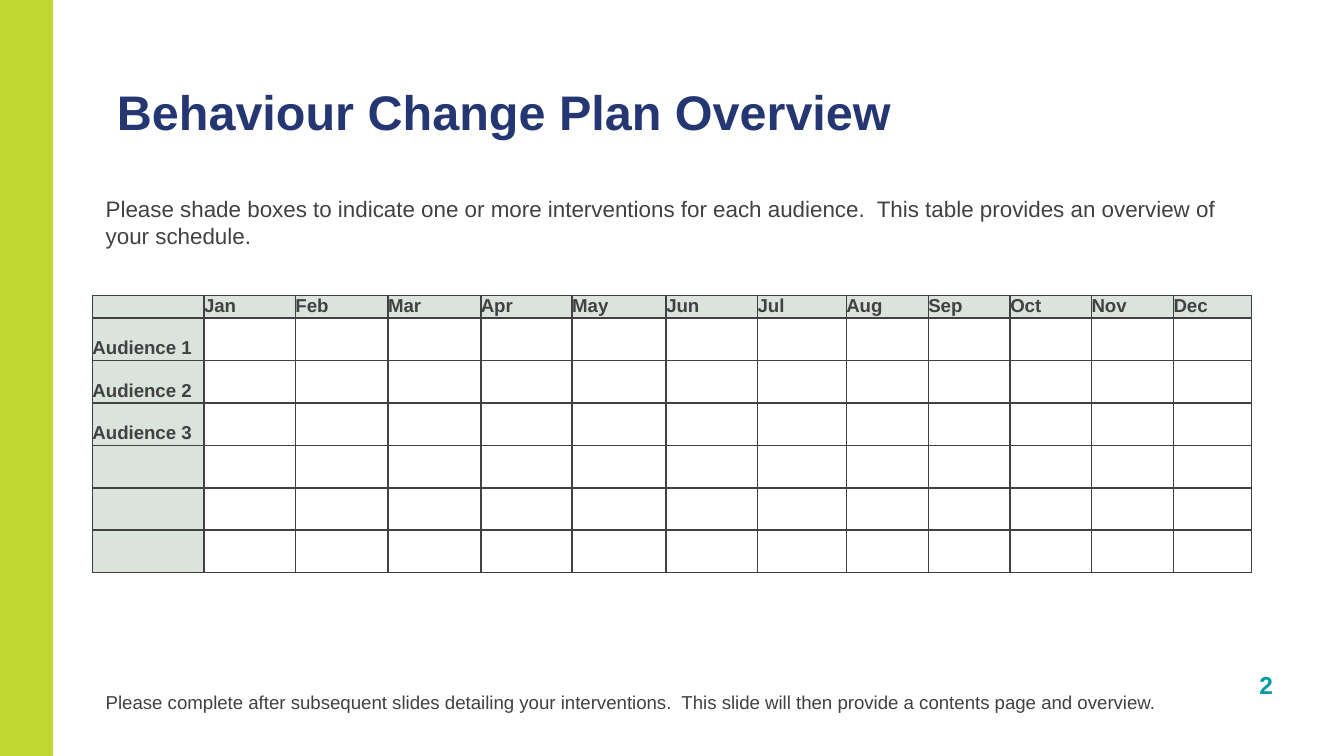
"""Build the behaviour change plan overview slide with its yearly schedule table."""
from lxml import etree
from pptx import Presentation
from pptx.dml.color import RGBColor
from pptx.enum.shapes import MSO_SHAPE
from pptx.enum.text import MSO_ANCHOR, PP_ALIGN
from pptx.oxml.ns import qn
from pptx.util import Inches, Pt

RECTANGLE = MSO_SHAPE.RECTANGLE
TOP, BOTTOM = MSO_ANCHOR.TOP, MSO_ANCHOR.BOTTOM
LEFT, RIGHT = PP_ALIGN.LEFT, PP_ALIGN.RIGHT

LIME = RGBColor(0xC0, 0xD6, 0x31)
NAVY = RGBColor(0x25, 0x37, 0x73)
TEAL = RGBColor(0x00, 0x9B, 0xA7)
CHARCOAL = RGBColor(0x41, 0x40, 0x42)
SAGE = RGBColor(0xDA, 0xE4, 0xDD)

WIDTH = Inches(10)
HEIGHT = WIDTH * 9 // 16
COLUMN, ROW = WIDTH / 100, HEIGHT / 100
MARGINS = ("margin_left", "margin_top", "margin_right", "margin_bottom")


def place(left, top, width, height):
    """Turn grid columns and rows into slide lengths."""
    return [round(length) for length in (left * COLUMN, top * ROW, width * COLUMN, height * ROW)]


def write(paragraph, text, font_format):
    """Add one run of Arial text with the given font values."""
    run = paragraph.add_run()
    run.text = text
    run.font.name = "Arial"
    run.font.color.rgb = font_format["color"]
    for name in ("size", "bold"):
        setattr(run.font, name, font_format[name])


presentation = Presentation()
presentation.slide_width, presentation.slide_height = WIDTH, HEIGHT
slide = presentation.slides.add_slide(presentation.slide_layouts[6])

side_bar = slide.shapes.add_shape(RECTANGLE, *place(-1.2, -0.7, 5.13, 101.5))
side_bar.shadow.inherit = False
side_bar.fill.solid()
side_bar.fill.fore_color.rgb = LIME
side_bar.line.fill.background()

TITLE = {"size": Pt(26), "bold": True, "color": NAVY}
PAGE_NUMBER = {"size": Pt(13.1), "bold": True, "color": TEAL}
BODY = {"size": Pt(12), "bold": False, "color": CHARCOAL}
NOTE = {"size": Pt(10), "bold": False, "color": CHARCOAL}
LABEL = {"size": Pt(10), "bold": True, "color": CHARCOAL}

text_boxes = [
    ("2", (87.8, 87.72, 7.9, 5.69), PAGE_NUMBER, BOTTOM, RIGHT),
    ("Behaviour Change Plan Overview", (8.7, 10.9, 61.4, 7.65), TITLE, BOTTOM, LEFT),
    ("Please shade boxes to indicate one or more interventions for each audience.  "
     "This table provides an overview of your schedule.",
     (6.88, 24.95, 86.3, 8.9), BODY, TOP, LEFT),
    ("Please complete after subsequent slides detailing your interventions.  "
     "This slide will then provide a contents page and overview.",
     (6.88, 90.5, 86.2, 4.8), NOTE, TOP, LEFT),
]
for text, area, font_format, anchor, alignment in text_boxes:
    text_frame = slide.shapes.add_textbox(*place(*area)).text_frame
    text_frame.word_wrap = True
    text_frame.vertical_anchor = anchor
    if font_format is TITLE:
        for margin in MARGINS:
            setattr(text_frame, margin, 0)
    paragraph = text_frame.paragraphs[0]
    paragraph.alignment = alignment
    write(paragraph, text, font_format)

months = ["Jan", "Feb", "Mar", "Apr", "May", "Jun", "Jul", "Aug", "Sep", "Oct", "Nov", "Dec"]
audiences = ["Audience 1", "Audience 2", "Audience 3", "", "", ""]
column_widths = [8.3, 6.8, 6.9, 6.9, 6.8, 7, 6.8, 6.6, 6.1, 6.1, 6.05, 6.1, 5.8]
row_heights = [2.85] + [5.62] * len(audiences)

table_area = place(6.88, 39.1, sum(column_widths), sum(row_heights))
table = slide.shapes.add_table(len(row_heights), len(column_widths), *table_area).table
for table_column, width in zip(table.columns, column_widths):
    table_column.width = round(width * COLUMN)
for table_row, height in zip(table.rows, row_heights):
    table_row.height = round(height * ROW)

for row_index in range(len(row_heights)):
    for column_index in range(len(column_widths)):
        cell = table.cell(row_index, column_index)
        for margin in MARGINS:
            setattr(cell, margin, 0)

        text = ""
        if row_index == 0 and column_index:
            text = months[column_index - 1]
        elif row_index and column_index == 0:
            text = audiences[row_index - 1]
            cell.vertical_anchor = BOTTOM
            cell.margin_bottom = Pt(1)
        paragraph = cell.text_frame.paragraphs[0]
        if text:
            write(paragraph, text, LABEL)
        else:
            etree.SubElement(paragraph._p, qn("a:endParaRPr"), sz="1000")

        properties = cell._tc.get_or_add_tcPr()
        for edge in ("a:lnL", "a:lnR", "a:lnT", "a:lnB"):
            border = etree.SubElement(properties, qn(edge), w=str(Pt(1)))
            border_fill = etree.SubElement(border, qn("a:solidFill"))
            etree.SubElement(border_fill, qn("a:srgbClr"), val=str(CHARCOAL))
        if row_index == 0 or column_index == 0:
            cell.fill.solid()
            cell.fill.fore_color.rgb = SAGE
        else:
            cell.fill.background()

presentation.save("out.pptx")
